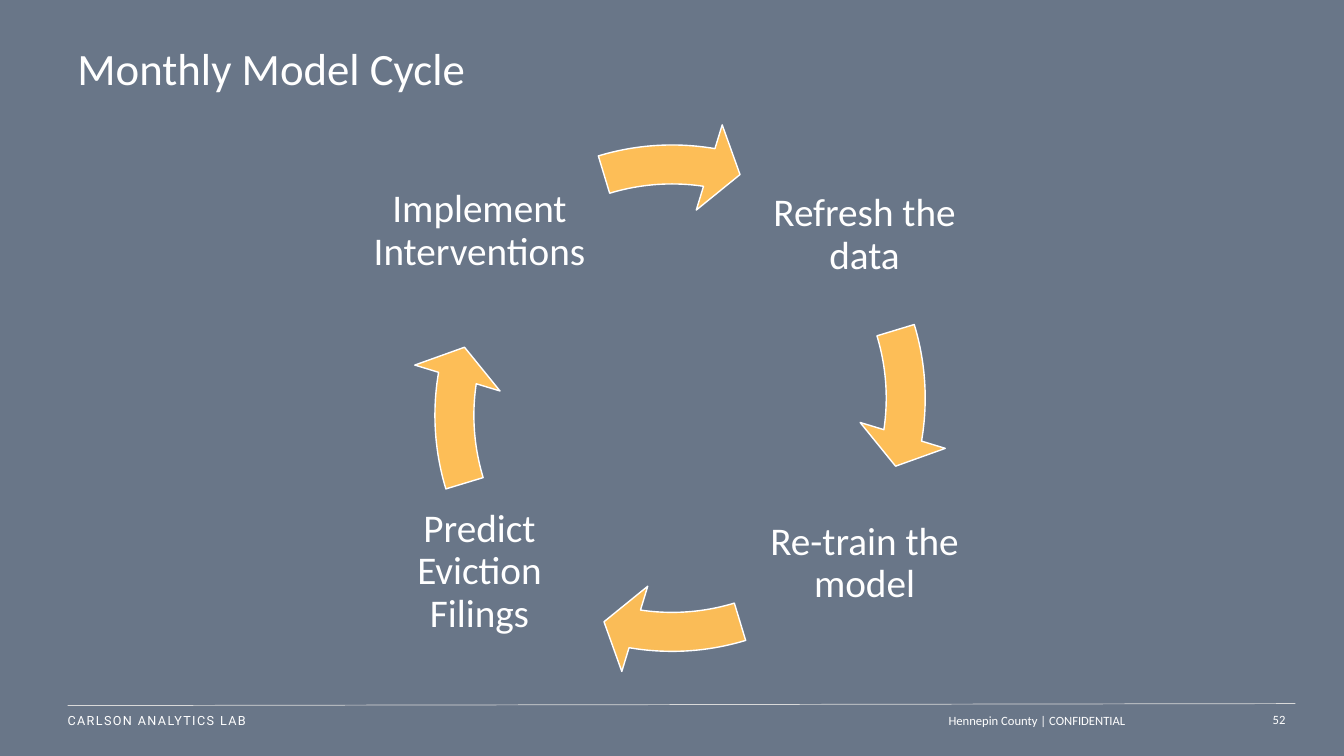
from collections import namedtuple
from dataclasses import dataclass

from lxml.etree import SubElement as Sub
from pptx import Presentation
from pptx.dml.color import RGBColor as Rgb
from pptx.enum.shapes import MSO_CONNECTOR as Conn, MSO_SHAPE as Shape
from pptx.enum.text import MSO_ANCHOR as Anchor, PP_ALIGN as Align
from pptx.oxml.ns import qn
from pptx.util import Inches, Pt

Box = namedtuple("Box", "x y w h")

# Grid: one column or row is a tenth of an inch
COLS, ROWS = 133.33, 75


@dataclass(frozen=True)
class Theme:
    back: Rgb = Rgb(0x69, 0x76, 0x88)
    text: Rgb = Rgb(0xFF, 0xFF, 0xFF)
    arrow: Rgb = Rgb(0xFD, 0xBE, 0x57)
    rule: Rgb = Rgb(0xD9, 0xD9, 0xD9)
    face: str = "Calibri"
    brand: str = "Roboto"
    title: int = 32
    label: int = 28
    small: int = 9


THEME = Theme()


def cell(n):
    return Inches(n / 10)


def place(box):
    return [cell(n) for n in box]


def write(slide, box, words, size, align=Align.LEFT, face=THEME.face,
          pads=(1, 0.5, 1, 0.5), lead=1.0, track=0):
    """Add one paragraph; pads run left, top, right, bottom."""
    frame = slide.shapes.add_textbox(*place(box)).text_frame
    frame.word_wrap = True
    frame.vertical_anchor = Anchor.MIDDLE
    (frame.margin_left, frame.margin_top,
     frame.margin_right, frame.margin_bottom) = place(pads)
    para = frame.paragraphs[0]
    para.alignment = align
    para.line_spacing = lead
    run = para.add_run()
    run.text = words
    font = run.font
    font.name, font.size = face, Pt(size)
    font.color.rgb = THEME.text
    if track:
        run._r.get_or_add_rPr().set("spc", str(track * 100))


def header(slide, box):
    write(slide, box, "Monthly Model Cycle", THEME.title, lead=0.9)


def arrow(slide, box, turn, alpha=100):
    """Draw an arc arrow, turned clockwise by quarters from the right."""
    shape = slide.shapes.add_shape(Shape.CIRCULAR_ARROW, *place(box))
    shape.shadow.inherit = False
    # Angles count 0.6 a degree: a full circle is 216, a quarter is 54
    tip, tail = 5.5 + 54 * turn, (205.85 + 54 * turn) % 216
    for i, val in enumerate((0.07, 4.65, tip, tail, 0.08)):
        shape.adjustments[i] = val
    shape.fill.solid()
    shape.fill.fore_color.rgb = THEME.arrow
    if alpha < 100:
        tint = shape._element.spPr.find(qn("a:solidFill"))[0]
        Sub(tint, qn("a:alpha")).set("val", str(alpha * 1000))
    shape.line.color.rgb = THEME.text
    shape.line.width = Pt(1)


def cycle(slide, box):
    mid_x, mid_y = box.x + box.w / 2, box.y + box.h / 2
    side, tall, pad = 19.1, 19.5, 0.3
    steps = (
        ("Refresh the data", side, -16.15, 19.5),
        ("Re-train the model", side, 16.45, 19.5),
        ("Predict Eviction Filings", -side, 17.25, 19.5),
        ("Implement Interventions", -side, -16.55, 24.5),
    )
    for words, dx, dy, wide in steps:
        spot = Box(mid_x + dx - wide / 2, mid_y + dy - tall / 2, wide, tall)
        write(slide, spot, words, THEME.label, Align.CENTER,
              pads=(pad,) * 4, lead=0.9)

    left = box._replace(x=box.x + 1.6, y=box.y + 1.7)
    for turn, ring, alpha in ((0, box, 100), (1, box, 98),
                              (2, left, 100), (3, box, 100)):
        arrow(slide, ring, turn, alpha)


def footer(slide, box):
    end = box.x + box.w
    rule = slide.shapes.add_connector(
        Conn.STRAIGHT, cell(box.x), cell(box.y + 0.2), cell(end), cell(box.y))
    rule.line.color.rgb = THEME.rule
    rule.line.width = Pt(0.5)
    Sub(rule._element.spPr, qn("a:effectLst"))

    flush = (0, 0.5, 1, 0.5)
    write(slide, box._replace(w=32.4), "CARLSON ANALYTICS LAB", THEME.small,
          face=THEME.brand, pads=flush, track=1)
    write(slide, Box(end - 75.3, box.y + 0.1, 59.4, 3.2),
          "Hennepin County | CONFIDENTIAL", THEME.small, Align.RIGHT)
    write(slide, Box(end - 4.5, box.y, 4.5, 3.2), "52", THEME.small,
          Align.RIGHT, pads=flush)


def main():
    deck = Presentation()
    deck.slide_width, deck.slide_height = cell(COLS), cell(ROWS)
    slide = deck.slides.add_slide(deck.slide_layouts[6])
    fill = slide.background.fill
    fill.solid()
    fill.fore_color.rgb = THEME.back

    ring = 55.2
    header(slide, Box(6.7, 4.3, 112, 5.4))
    cycle(slide, Box((COLS - ring) / 2, 11.9, ring, ring))
    footer(slide, Box(6.7, 69.8, 121.8, 3.3))
    deck.save("out.pptx")


if __name__ == "__main__":
    main()
